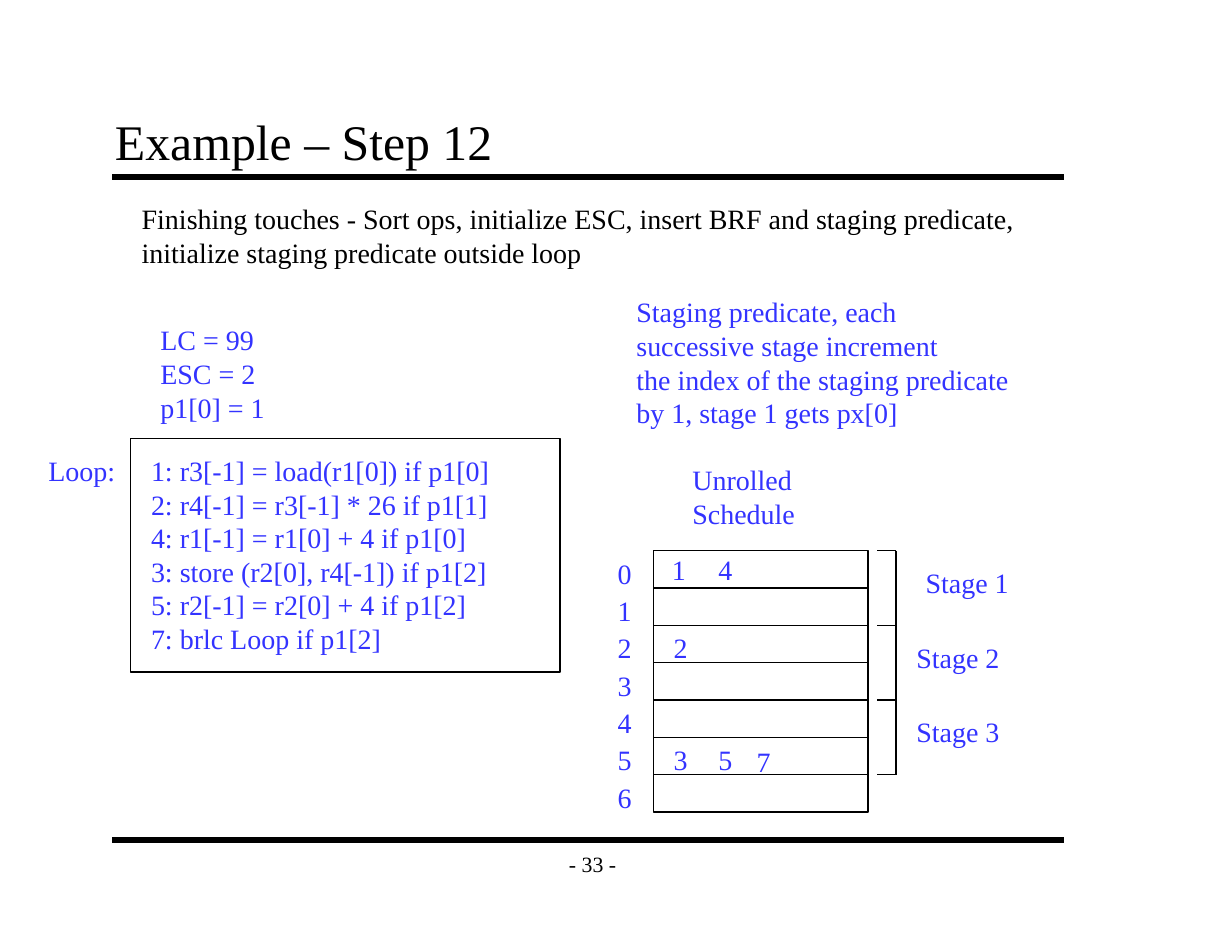
from lxml import etree
from pptx import Presentation, util as u
from pptx.dml.color import RGBColor
from pptx.enum import shapes, text
from pptx.oxml import ns

FONT = "Times New Roman"
BLACK, BLUE = "000000", "3333FF"
WIDTH, HEIGHT = 132, 102  # grid of twelve units to the inch
LINE_HEIGHT = 3.6


def grid(units):
    return u.Inches(units / 12)


def colour(hex_string):
    return RGBColor.from_string(hex_string)


def style(paragraph, size, hex_string):
    paragraph.font.name = FONT
    paragraph.font.size = u.Pt(size)
    paragraph.font.color.rgb = colour(hex_string)


def add_text(slide, left, top, width, lines, hex_string=BLUE):
    height = LINE_HEIGHT * len(lines) + 1.2
    box = slide.shapes.add_textbox(*map(grid, (left, top, width, height)))
    frame = box.text_frame
    frame.word_wrap = False
    frame.text = "\n".join(lines)
    for paragraph in frame.paragraphs:
        style(paragraph, 18, hex_string)
    return box


def add_line(slide, x1, y1, x2, y2, weight=1):
    line = slide.shapes.add_connector(
        shapes.MSO_CONNECTOR.STRAIGHT, *map(grid, (x1, y1, x2, y2)))
    line.line.color.rgb = colour(BLACK)
    line.line.width = u.Pt(weight)
    etree.SubElement(line._element.spPr, ns.qn("a:effectLst"))


def add_frame(slide, left, top, width, height):
    frame = slide.shapes.add_shape(
        shapes.MSO_SHAPE.RECTANGLE, *map(grid, (left, top, width, height)))
    frame.shadow.inherit = False
    frame.fill.background()
    frame.line.color.rgb = colour(BLACK)
    frame.line.width = u.Pt(1)


def add_heading(slide, left, top, width, height):
    title = slide.shapes.title
    title.left, title.top, title.width, title.height = map(
        grid, (left, top, width, height))
    frame = title.text_frame
    frame.text = "Example – Step 12"
    frame.vertical_anchor = text.MSO_ANCHOR.BOTTOM
    frame.margin_left = frame.margin_right = u.Inches(0.11)
    frame.margin_top = frame.margin_bottom = u.Inches(0.06)
    paragraph = frame.paragraphs[0]
    paragraph.alignment = text.PP_ALIGN.LEFT
    style(paragraph, 32, BLACK)
    add_line(slide, left + 1, top + height, left + 1 + width, top + height, 4)


def add_footer(slide, left, top, width):
    add_line(slide, left, top, left + width, top, 4)
    number = add_text(slide, left + 47, top, 9, ["- 33 -"], BLACK)
    number.height = grid(5)
    number.text_frame.vertical_anchor = text.MSO_ANCHOR.MIDDLE
    paragraph = number.text_frame.paragraphs[0]
    paragraph.alignment = text.PP_ALIGN.CENTER
    paragraph.font.size = u.Pt(14)


def add_loop(slide, left, top, width, height):
    """Framed loop body, its label, and the initial values above it."""
    add_text(slide, left + 1, top + 1, width - 2, [
        "1: r3[-1] = load(r1[0]) if p1[0]",
        "2: r4[-1] = r3[-1] * 26 if p1[1]",
        "4: r1[-1] = r1[0] + 4 if p1[0]",
        "3: store (r2[0], r4[-1]) if p1[2]",
        "5: r2[-1] = r2[0] + 4 if p1[2]",
        "7: brlc Loop if p1[2]",
    ])
    add_frame(slide, left, top, width, height)
    add_text(slide, left - 10, top + 1, 10, ["Loop:"])
    add_text(slide, left + 2, top - 13, 15,
             ["LC = 99", "ESC = 2", "p1[0] = 1"])


def add_schedule(slide, left, top, width, height, rows=7):
    """Cycle rows with their operations, cycle numbers and stage brackets."""
    row = height / rows
    right = left + width
    add_frame(slide, left, top, width, height)
    for cycle in range(rows):
        y = top + cycle * row
        add_text(slide, left - 5, y, 4, [str(cycle)])
        if cycle:
            add_line(slide, left, y, right, y)

    operations = [("1", 0.8, -0.4), ("4", 5.8, -0.4), ("2", 1, 2 * row),
                  ("3", 1, 5 * row), ("5", 5.8, 5 * row),
                  ("7", 9.9, 5 * row + 0.2)]
    for operation, x, y in operations:
        add_text(slide, left + x, top + y, 4, [operation])

    tick, spine = right + 1, right + 3
    add_line(slide, tick, top, spine, top)
    for stage, gap in enumerate((2, 1, 1)):
        start = top + stage * 2 * row
        end = start + 2 * row
        add_line(slide, spine, start, spine, end)
        add_line(slide, tick, end, spine, end)
        add_text(slide, spine + gap, start + 1, 12, [f"Stage {stage + 1}"])


def main():
    presentation = Presentation()
    presentation.slide_width = grid(WIDTH)
    presentation.slide_height = grid(HEIGHT)
    slide = presentation.slides.add_slide(presentation.slide_layouts[5])

    add_heading(slide, 11, 11, 102, 8)
    add_footer(slide, 12, 90, 102)
    add_text(slide, 14, 21, 98, [
        "Finishing touches - Sort ops, initialize ESC, "
        "insert BRF and staging predicate,",
        "initialize staging predicate outside loop",
    ], BLACK)
    add_loop(slide, 14, 47, 46, 25)
    add_text(slide, 67, 31, 44, [
        "Staging predicate, each",
        "successive stage increment",
        "the index of the staging predicate",
        "by 1, stage 1 gets px[0]",
    ])
    add_text(slide, 73, 49, 15, ["Unrolled", "Schedule"])
    add_schedule(slide, 70, 59, 23, 28)

    presentation.save("out.pptx")


if __name__ == "__main__":
    main()
